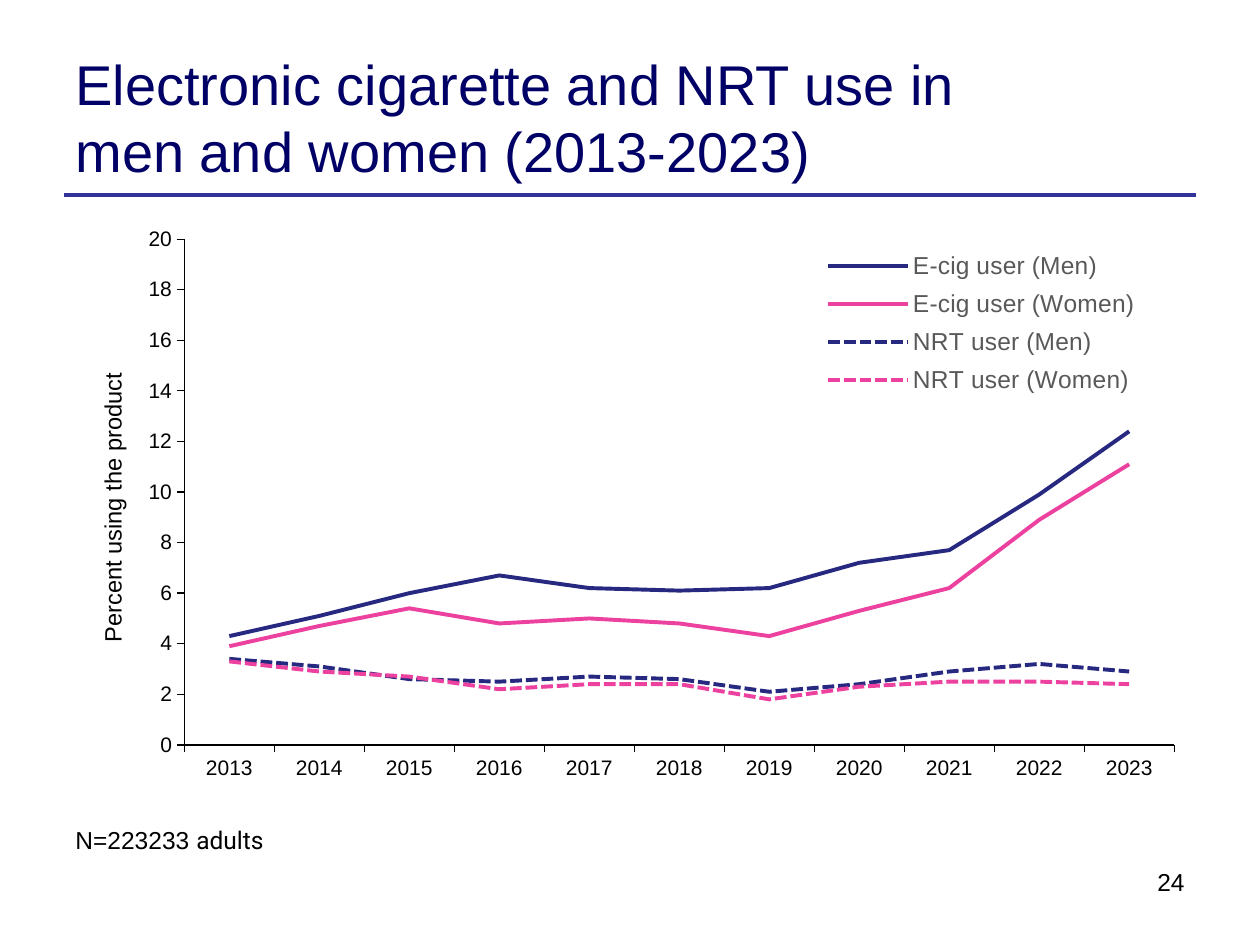
from lxml import etree
from pptx import Presentation
from pptx.chart.data import CategoryChartData
from pptx.dml.color import RGBColor
from pptx.enum.chart import XL_CHART_TYPE as CHART, XL_LEGEND_POSITION as LEGEND, XL_TICK_MARK as TICK
from pptx.enum.dml import MSO_LINE
from pptx.enum.shapes import MSO_CONNECTOR
from pptx.enum.text import MSO_ANCHOR as ANCHOR, PP_ALIGN as ALIGN
from pptx.oxml.ns import qn
from pptx.util import Inches, Pt

COLORS = {"title": "000066", "rule": "333399", "text": "000000",
          "legend": "595959", "men": "272880", "women": "EC419F"}
YEARS = [str(year) for year in range(2013, 2024)]
SERIES = [
    ("E-cig user (Men)", "men", None,
     (4.3, 5.1, 6, 6.7, 6.2, 6.1, 6.2, 7.2, 7.7, 9.9, 12.4)),
    ("E-cig user (Women)", "women", None,
     (3.9, 4.7, 5.4, 4.8, 5, 4.8, 4.3, 5.3, 6.2, 8.9, 11.1)),
    ("NRT user (Men)", "men", MSO_LINE.SQUARE_DOT,
     (3.4, 3.1, 2.6, 2.5, 2.7, 2.6, 2.1, 2.4, 2.9, 3.2, 2.9)),
    ("NRT user (Women)", "women", MSO_LINE.SQUARE_DOT,
     (3.3, 2.9, 2.7, 2.2, 2.4, 2.4, 1.8, 2.3, 2.5, 2.5, 2.4)),
]


def rgb(name):
    return RGBColor.from_string(COLORS[name])


def set_font(font, size, color="text", name="Arial"):
    font.size, font.name, font.bold = Pt(size), name, False
    font.color.rgb = rgb(color)


def set_line(line, color, width):
    line.color.rgb = rgb(color)
    line.width = Pt(width)


def add_text(s, box, runs, size, color="text", align=ALIGN.LEFT, anchor=ANCHOR.TOP):
    tf = s.shapes.add_textbox(*map(Inches, box)).text_frame
    tf.word_wrap = True
    tf.vertical_anchor = anchor
    p = tf.paragraphs[0]
    p.alignment = align
    for text, font_name in runs:
        r = p.add_run()
        r.text = text
        set_font(r.font, size, color, font_name)


def add_rule(s, left, right, y):
    rule = s.shapes.add_connector(MSO_CONNECTOR.STRAIGHT, *map(Inches, (left, y, right, y)))
    set_line(rule.line, "rule", 2.25)
    etree.SubElement(rule._element.spPr, qn("a:effectLst"))


def place(parent, before, inner=False, **fractions):
    """Give a chart part a manual layout, ahead of the first of the named tags."""
    for old in parent.findall(qn("c:layout")):
        parent.remove(old)
    layout = etree.Element(qn("c:layout"))
    manual = etree.SubElement(layout, qn("c:manualLayout"))
    settings = {"layoutTarget": "inner"} if inner else {}
    settings.update(xMode="edge", yMode="edge", **fractions)
    for tag, value in settings.items():
        etree.SubElement(manual, qn(f"c:{tag}")).set("val", str(value))
    next(child for child in parent if child.tag in map(qn, before)).addprevious(layout)


def style_axis(axis):
    axis.has_major_gridlines = False
    axis.major_tick_mark, axis.minor_tick_mark = TICK.OUTSIDE, TICK.NONE
    set_font(axis.tick_labels.font, 12)
    set_line(axis.format.line, "text", 0.75)


def add_use_chart(s, box):
    data = CategoryChartData(number_format="General")
    data.categories = YEARS
    for name, _, _, values in SERIES:
        data.add_series(name, values)
    chart = s.shapes.add_chart(CHART.LINE, *map(Inches, box), data).chart
    chart.has_title = False
    set_font(chart.font, 10)
    chart.plots[0].vary_by_categories = False

    # Lines: colour by sex, dashes for NRT
    for series, (_, color, dash, _) in zip(chart.plots[0].series, SERIES):
        series.smooth = False
        set_line(series.format.line, color, 2.25)
        if dash:
            series.format.line.dash_style = dash

    # Axes
    style_axis(chart.category_axis)
    axis = chart.value_axis
    style_axis(axis)
    axis.minimum_scale, axis.maximum_scale, axis.major_unit = 0, 20, 2
    r = axis.axis_title.text_frame.paragraphs[0].add_run()
    r.text = "Percent using the product"
    set_font(r.font, 13.5)

    # Legend over the plot
    chart.has_legend = True
    legend = chart.legend
    legend.position = LEGEND.BOTTOM
    legend.include_in_layout = False
    set_font(legend.font, 14, "legend")

    # Positions as fractions of the chart
    place(chart.plots[0]._element.getparent(), ["c:lineChart"], inner=True,
          x=0.107, y=0.036, w=0.873, h=0.811)
    place(legend._element, ["c:overlay"], x=0.67, y=0.04, w=0.28, h=0.26)
    place(axis.axis_title._element, ["c:overlay", "c:spPr", "c:txPr"], x=0.027, y=0.244)


def main():
    prs = Presentation()
    prs.slide_width, prs.slide_height = Inches(10), Inches(7.5)
    s = prs.slides.add_slide(prs.slide_layouts[6])

    # Heading
    add_rule(s, 0.51, 9.49, 1.55)
    add_text(s, (0.5, 0.3, 7.89, 1.25),
             [("Electronic cigarette and NRT use in men and women (2013-2023)", "Arial")],
             32, "title", anchor=ANCHOR.MIDDLE)

    # Chart
    add_use_chart(s, (0.5, 1.72, 9, 4.95))

    # Footer
    add_text(s, (6.73, 6.83, 2.77, 0.52), [("24", "Arial")], 14, align=ALIGN.RIGHT)
    add_text(s, (0.5, 6.5, 8.51, 0.34), [("N=223233 ", "Arial"), ("adults", "Roboto")], 14)

    prs.save("out.pptx")


if __name__ == "__main__":
    main()
